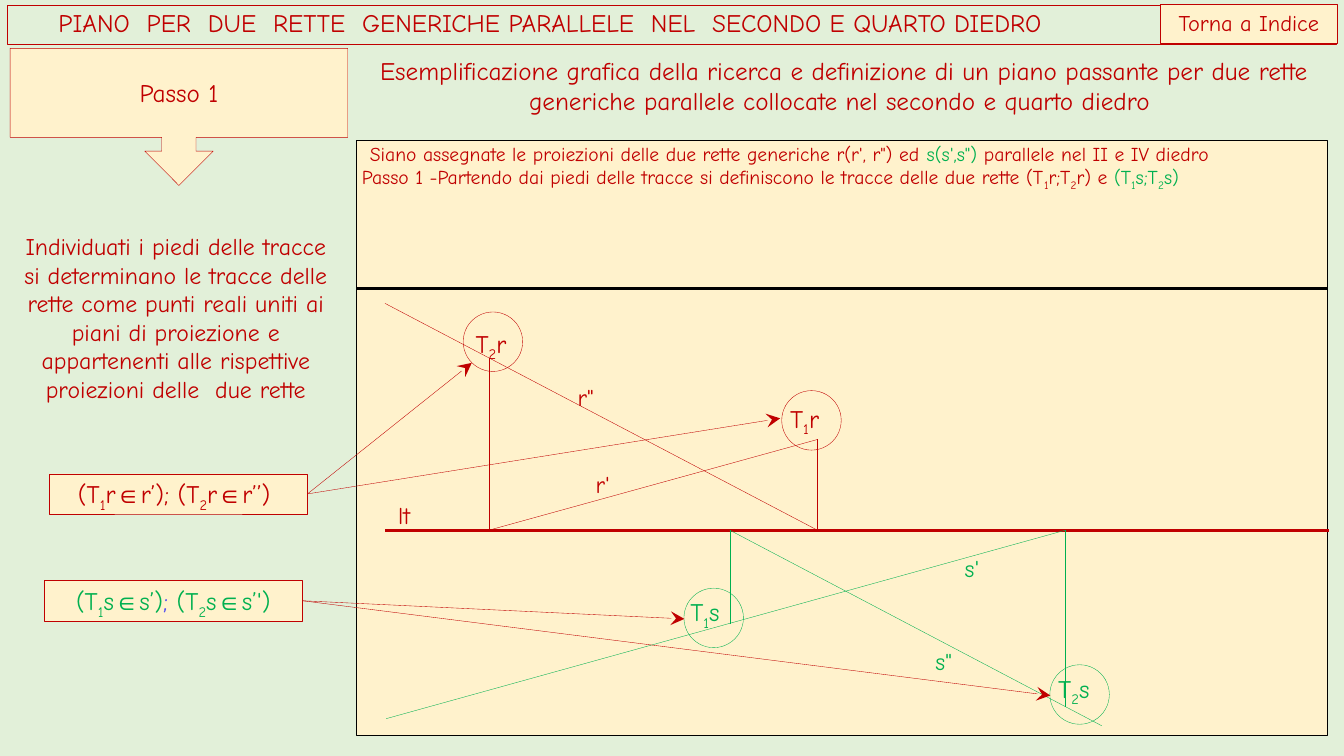
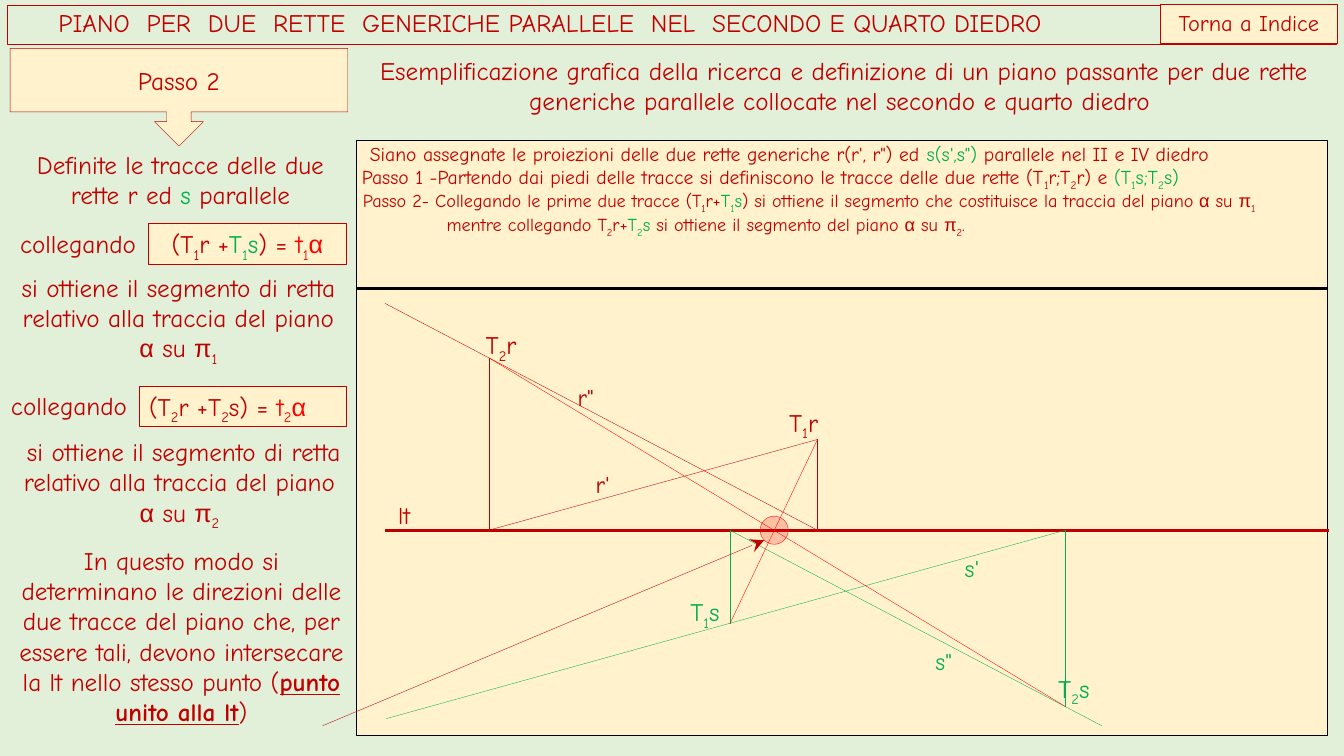
from itertools import groupby

from lxml.etree import SubElement
from pptx import Presentation
from pptx.dml.color import RGBColor
from pptx.enum.shapes import MSO_CONNECTOR, MSO_SHAPE
from pptx.enum.text import MSO_ANCHOR, MSO_AUTO_SIZE, PP_ALIGN
from pptx.oxml.ns import qn
from pptx.util import Inches, Pt

RED = RGBColor(0xC0, 0x00, 0x00)
GREEN = RGBColor(0x00, 0xB0, 0x50)
HOT = RGBColor(0xFF, 0x00, 0x00)
BLUE = RGBColor(0x54, 0x50, 0xEE)
BLACK = RGBColor(0x00, 0x00, 0x00)
CREAM = RGBColor(0xFF, 0xF2, 0xCC)
MINT = RGBColor(0xE2, 0xF0, 0xD9)

FACE, MATH = "Comic Neue", "Arial"
INKS = {"^": RED, "~": GREEN, "*": HOT, "@": BLUE}
LEFT, MID = PP_ALIGN.LEFT, PP_ALIGN.CENTER
GROW = {"auto_size": MSO_AUTO_SIZE.SHAPE_TO_FIT_TEXT}
BARE = {"margin_left": 0, "margin_right": 0, "margin_top": 0, "margin_bottom": 0}
LABEL = {**GROW, **BARE, "word_wrap": False}
NOTE = {**GROW, **BARE}
CENTRE = {"vertical_anchor": MSO_ANCHOR.MIDDLE}

# Grid of ten columns and ten rows to the inch
WIDE, HIGH = 133.33, 75
GROUND = 52.6
R1, R2 = (81.1, 43.6), (48.5, 35.5)
S1, S2 = (72.4, 61.9), (105.7, 70.1)


def unit(cells):
    return Inches(cells / 10)


def foot(point):
    return point[0], GROUND


def dress(item, form):
    for name, value in form.items():
        setattr(item, name, value)


def split(text):
    """Yield (char, style): ink marks set the colour, _ lowers one character, # toggles bold."""
    ink, low, bold = RED, False, False
    for char in text:
        if char in INKS:
            ink = INKS[char]
        elif char == "_":
            low = True
        elif char == "#":
            bold = not bold
        else:
            yield char, (ink, low, bold, MATH if char in "∈απ" else FACE)
            low = False


class Deck:
    def __init__(self):
        self.show = Presentation()
        dress(self.show, {"slide_width": unit(WIDE), "slide_height": unit(HIGH)})
        self.slide = None

    def page(self):
        self.slide = self.show.slides.add_slide(self.show.slide_layouts[6])
        fill = self.slide.background.fill
        fill.solid()
        fill.fore_color.rgb = MINT

    def put(self, shape, text, size, align, form):
        """Set marked-up text in a shape and return its paragraph."""
        frame = shape.text_frame
        dress(frame, {"word_wrap": True, "vertical_anchor": MSO_ANCHOR.TOP, **form})
        para = frame.paragraphs[0]
        para.alignment = align
        for style, chars in groupby(split(text), key=lambda pair: pair[1]):
            ink, low, bold, face = style
            run = para.add_run()
            run.text = "".join(char for char, _ in chars)
            dress(run.font, {"name": face, "size": Pt(size), "bold": bold, "underline": bold})
            run.font.color.rgb = ink
            if low:
                run.font._element.set("baseline", "-25000")
        return para

    def text(self, area, text, size=18, align=LEFT, form=GROW):
        shape = self.slide.shapes.add_textbox(*map(unit, area))
        self.put(shape, text, size, align, form)

    def shape(self, kind, area, fill=CREAM, ink=RED, width=0.25, alpha=None):
        shape = self.slide.shapes.add_shape(kind, *map(unit, area))
        shape.shadow.inherit = False
        if fill is None:
            shape.fill.background()
        else:
            shape.fill.solid()
            shape.fill.fore_color.rgb = fill
        shape.line.color.rgb = ink
        shape.line.width = Pt(width)
        if alpha:
            tint = shape._element.spPr.find(qn("a:solidFill"))[0]
            SubElement(tint, qn("a:alpha")).set("val", str(alpha * 1000))
        return shape

    def box(self, area, text, size=18, align=MID, form=GROW, width=0.25):
        shape = self.shape(MSO_SHAPE.RECTANGLE, area, width=width)
        self.put(shape, text, size, align, form)
        return shape

    def ring(self, mid, size, ink, fill=None, alpha=None):
        area = mid[0] - size / 2, mid[1] - size / 2, size, size
        self.shape(MSO_SHAPE.OVAL, area, fill, ink, alpha=alpha)

    def line(self, start, end, ink=RED, width=0.25, head=False, join=None):
        """Draw a straight line; join is a box whose right side it leaves from."""
        line = self.slide.shapes.add_connector(
            MSO_CONNECTOR.STRAIGHT, *map(unit, (*start, *end)))
        line.line.color.rgb = ink
        line.line.width = Pt(width)
        props = line._element.spPr
        if head:
            tip = SubElement(props.find(qn("a:ln")), qn("a:tailEnd"))
            for name, value in {"type": "stealth", "w": "lg", "len": "lg"}.items():
                tip.set(name, value)
        SubElement(props, qn("a:effectLst"))
        if join is not None:
            line.begin_connect(join, 3)

    def frame(self, step, tall):
        """Draw the title band, the step callout and the heading."""
        band = self.shape(MSO_SHAPE.RECTANGLE, (0.7, 0.5, 131.9, 3.9), None)
        title = "PIANO  PER  DUE  RETTE  GENERICHE PARALLELE  NEL  SECONDO E QUARTO DIEDRO"
        para = self.put(band, title, 18, LEFT, {**CENTRE, "margin_left": unit(5.1)})
        para.line_spacing = 0.9
        call = self.shape(MSO_SHAPE.DOWN_ARROW_CALLOUT, (1, 4.8, 33.5, tall))
        self.put(call, step, 18, MID, CENTRE)
        self.box((115.1, 0.4, 17.6, 3.9), "Torna a Indice", 16)
        self.text((35.3, 5, 96.8, 7.1),
                  "Esemplificazione grafica della ricerca e definizione di un piano passante "
                  "per due rette generiche parallele collocate nel secondo e quarto diedro ",
                  align=MID)

    def plot(self, spots):
        """Draw the panel with both lines, their projections and trace labels."""
        self.shape(MSO_SHAPE.RECTANGLE, (35.4, 13.9, 96.3, 59.1), ink=BLACK, width=0)
        self.line((131.7, 28.6), (35.4, 28.6), BLACK, 0)
        self.text((36.7, 14.1, 92.7, 2.4),
                  "Siano assegnate le proiezioni delle due rette generiche r(r', r\") ed "
                  "~s(s',s\") ^parallele nel II e IV diedro", 14, form=LABEL)
        self.text((35.9, 16.4, 94, 2.4),
                  "Passo 1 -Partendo dai piedi delle tracce si definiscono le tracce "
                  "delle due rette (T_1r;T_2r) e ~(T_1s;T_2s)", 14, form=NOTE)
        for x, y, name in ((57.3, 38, 'r"'), (59.1, 46.6, "r'"), (92.8, 64.2, '~s"'),
                           (95.7, 54.9, "~s'"), (39.5, 49.7, "lt")):
            self.text((x, y, 2.1, 3), name, 17, form=LABEL)
        self.line((38.2, GROUND), (131.8, GROUND), width=0)
        self.line(foot(R2), R1)
        self.line(foot(R1), (38.2, 30.1))
        self.line((38.3, 71.3), foot(S2), GREEN)
        self.line((109.3, 72), foot(S1), GREEN)
        for point, ink in ((R2, RED), (R1, RED), (S1, GREEN), (S2, GREEN)):
            self.line(foot(point), point, ink)
        names = ("T_2r", "T_1r", "~T_2s", "~T_1s")
        for spot, name in zip((*spots, (104, 66.3), (67.5, 58.7)), names):
            self.text((*spot, 6.4, 4), name)


def first(deck):
    deck.page()
    deck.frame("Passo 1", 13.6)
    deck.plot(((46.2, 32.1), (77.4, 39.5)))
    deck.text((1, 22.5, 32.9, 21),
              "Individuati i piedi delle tracce si determinano le tracce delle rette come "
              "punti reali uniti ai piani di proiezione e appartenenti alle rispettive "
              "proiezioni delle  due rette", 17, MID)
    for mid, ink in (((80.5, 41.7), RED), ((48.9, 33.9), RED),
                     ((70.8, 61.3), GREEN), ((107.1, 68.9), GREEN)):
        deck.ring(mid, 5.9, ink)
    rules = (
        (4.9, 47, "(T_1r∈r’); (T_2r∈r’’) ", ((46.8, 36), (77.4, 41.5))),
        (4.4, 57.6, "~(T_1s∈s’)@; ~(T_2s∈s’')", ((67.9, 61.4), (104.2, 69))),
    )
    for x, y, rule, ends in rules:
        box = deck.box((x, y, 25.6, 4), rule)
        for end in ends:
            deck.line((x + 25.6, y + 2), end, head=True, join=box)


def second(deck):
    deck.page()
    deck.frame("Passo 2", 9.7)
    deck.plot(((47.2, 32.2), (77.3, 39.9)))
    deck.text((36, 18.8, 95.5, 2.2),
              "Passo 2- Collegando le prime due tracce (T_1r+~T_1s^) si ottiene il segmento "
              "che costituisce la traccia del piano α su π_1", 13, form=NOTE)
    deck.text((44.3, 21.2, 87, 2.2),
              "mentre collegando T_2r+~T_2s^ si ottiene il segmento del piano α su π_2.",
              13, form=NOTE)
    deck.line(R2, S2, HOT)
    deck.line(S1, R1, HOT)
    deck.ring((76.8, GROUND), 2.8, HOT, HOT, 20)
    deck.line((32, 72), (75.8, 53.6), head=True)
    deck.text((0.7, 14.3, 34.4, 7.1),
              "Definite le tracce delle due rette r ed ~s^ parallele", align=MID)
    deck.box((14.7, 22.2, 19.7, 4), "(T_1r +~T_1s^) = *t_1α", width=0.75)
    deck.box((13.8, 38.3, 20.5, 4), "(T_2r +T_2s) = *t_2α", align=LEFT)
    for x, y in ((1, 22.2), (0.1, 38.2)):
        deck.text((x, y, 14.2, 4), "collegando")
    goal = "si ottiene il segmento di retta relativo alla traccia del piano α su π_"
    deck.text((0.5, 26.5, 34.4, 10.1), goal + "1", align=MID)
    deck.text((0.7, 42.8, 34.2, 10.1), " " + goal + "2", align=MID)
    deck.text((0.3, 53.6, 35.4, 19.2),
              "In questo modo si determinano le direzioni delle due tracce del piano che, "
              "per essere tali, devono intersecare la lt nello stesso punto "
              "(#punto unito alla lt#)", align=MID)


def main():
    deck = Deck()
    first(deck)
    second(deck)
    deck.show.save("out.pptx")


if __name__ == "__main__":
    main()
